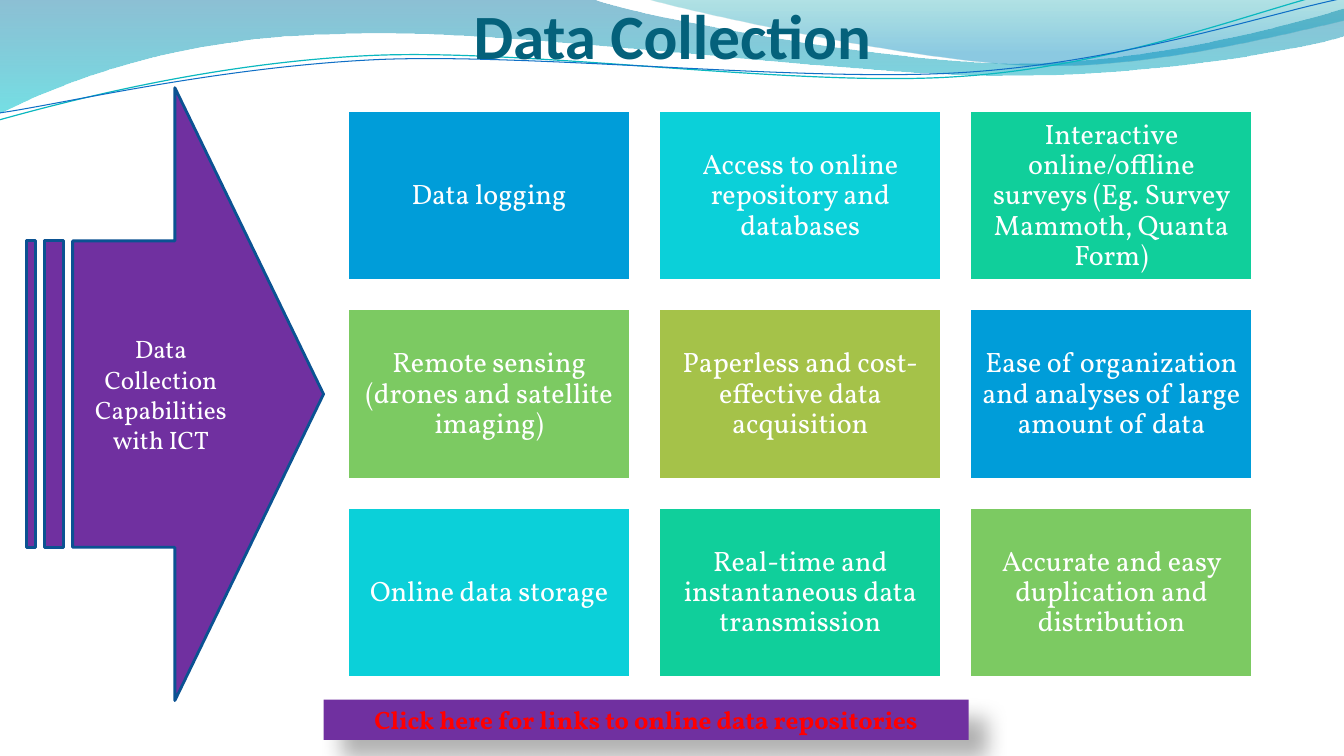
from lxml import etree
from pptx import Presentation
from pptx.dml.color import RGBColor
from pptx.enum.shapes import MSO_SHAPE
from pptx.enum.text import MSO_ANCHOR, MSO_AUTO_SIZE, PP_ALIGN
from pptx.oxml.ns import qn
from pptx.util import Pt

PX = 9144  # EMU per px, 100 px to the inch
RECT, ARROW = MSO_SHAPE.RECTANGLE, MSO_SHAPE.STRIPED_RIGHT_ARROW
CENTER = PP_ALIGN.CENTER
MIDDLE, BOTTOM = MSO_ANCHOR.MIDDLE, MSO_ANCHOR.BOTTOM
NO_AUTOFIT = MSO_AUTO_SIZE.NONE

WHITE = RGBColor(0xFF, 0xFF, 0xFF)
RED = RGBColor(0xFF, 0x00, 0x00)
PURPLE = RGBColor(0x70, 0x30, 0xA0)
NAVY = RGBColor(0x0B, 0x52, 0x92)
TITLE_TEAL = RGBColor(0x04, 0x61, 0x7B)
BLUE = RGBColor(0x00, 0x9D, 0xD9)
CYAN = RGBColor(0x0B, 0xD0, 0xD9)
MINT = RGBColor(0x10, 0xCF, 0x9B)
GREEN = RGBColor(0x7C, 0xCA, 0x62)
OLIVE = RGBColor(0xA5, 0xC2, 0x49)
WAVE_BLUE = RGBColor(0x00, 0x74, 0xA1)
WAVE_CYAN = RGBColor(0x00, 0xC6, 0xCF)
CREST_TEAL = RGBColor(0x00, 0xA1, 0xA9)
CREST_BLUE = RGBColor(0x00, 0x8B, 0xBF)
LINE_TEAL = RGBColor(0x0A, 0xB8, 0xBF)
LINE_BLUE = RGBColor(0x0F, 0x6F, 0xC6)

# Each outline is a start point, then lines (2 numbers) and Bézier curves (6 numbers).
WAVE = [(0, 0), (587, -1), (634, 17, 885, 63, 1011, 63), (1138, 63, 1278, 26, 1333, 9),
        (1335, 36), (1311, 44, 1160, 76, 994, 75), (829, 75, 509, 28, 343, 34),
        (172, 36, 61, 83, -1, 113)]
CREST = [(639, -1), (679, 11, 909, 62, 1025, 65), (1141, 69, 1282, 32, 1333, 21), (1333, 0)]
TEAL_LINE = [(-1, 119), (64, 101, 211, 62, 369, 55), (527, 48, 790, 87, 950, 76),
             (1110, 66, 1252, 8, 1331, -10)]
BLUE_LINE = [(0, 112), (63, 103, 218, 66, 378, 59), (537, 53, 796, 82, 955, 72),
             (1115, 62, 1255, 14, 1334, -2)]

CAPABILITIES = [
    ("Data logging", BLUE),
    ("Access to online repository and databases", CYAN),
    ("Interactive online/offline surveys (Eg. Survey Mammoth, Quanta Form)", MINT),
    ("Remote sensing (drones and satellite imaging)", GREEN),
    ("Paperless and cost-effective data acquisition", OLIVE),
    ("Ease of organization and analyses of large amount of data", BLUE),
    ("Online data storage", CYAN),
    ("Real-time and instantaneous data transmission", MINT),
    ("Accurate and easy duplication and distribution", GREEN),
]


def add_outline(shapes, outline, close):
    """Join the end points by lines, then bend the segments that have control points."""
    start, *segments = outline
    builder = shapes.build_freeform(start[0] * PX, start[1] * PX)
    builder.add_line_segments([(segment[-2] * PX, segment[-1] * PX) for segment in segments],
                              close=close)
    shape = builder.convert_to_shape()
    shape.shadow.inherit = False
    lines = list(shape._element.spPr.iter(qn("a:lnTo")))
    for line, segment in zip(lines, segments):
        if len(segment) == 6:
            line.addprevious(bezier(segment, shape.left, shape.top))
            line.getparent().remove(line)
    return shape


def bezier(segment, left, top):
    curve = etree.Element(qn("a:cubicBezTo"))
    for x, y in zip(segment[::2], segment[1::2]):
        etree.SubElement(curve, qn("a:pt"), x=str(x * PX - left), y=str(y * PX - top))
    return curve


def add_wave(shapes, outline, stops):
    """Fill an outline top to bottom with (position, colour, opacity %) stops."""
    wave = add_outline(shapes, outline, True)
    wave.line.fill.background()
    wave.fill.gradient()
    wave.fill.gradient_angle = 270
    for stop, (position, color, _) in zip(wave.fill.gradient_stops, stops):
        stop.position = position
        stop.color.rgb = color
    colors = wave._element.spPr.find(qn("a:gradFill")).iter(qn("a:srgbClr"))
    for color, (_, _, opacity) in zip(colors, stops):
        etree.SubElement(color, qn("a:alpha"), val=str(opacity * 1000))


def add_wave_line(shapes, outline, color, width):
    curve = add_outline(shapes, outline, False)
    curve.fill.background()
    curve.line.color.rgb = color
    curve.line.width = Pt(width)


def add_wave_header(shapes):
    add_wave(shapes, WAVE, [(0, WAVE_BLUE, 45), (1, WAVE_CYAN, 55)])
    add_wave(shapes, CREST, [(0, CREST_TEAL, 30), (0.8, CREST_BLUE, 45)])
    add_wave_line(shapes, TEAL_LINE, LINE_TEAL, 0.85)
    add_wave_line(shapes, BLUE_LINE, LINE_BLUE, 0.75)


def write(shape, text, size, color, font="Vollkorn", bold=False):
    paragraph = shape.text_frame.paragraphs[0]
    paragraph.alignment = CENTER
    run = paragraph.add_run()
    run.text = text
    run.font.name = font
    run.font.size = Pt(size)
    run.font.bold = bold
    run.font.color.rgb = color
    return paragraph


def set_insets(frame, left, top, right, bottom):
    frame.margin_left, frame.margin_top = left * PX, top * PX
    frame.margin_right, frame.margin_bottom = right * PX, bottom * PX


def add_title(slide, left, top, width, height):
    title = slide.shapes.title
    title.left, title.top = left * PX, top * PX
    title.width, title.height = width * PX, height * PX
    frame = title.text_frame
    frame.auto_size = NO_AUTOFIT
    frame.vertical_anchor = BOTTOM
    set_insets(frame, 0, 5, 0, 0)
    write(title, "Data Collection", 45, TITLE_TEAL, "Calibri", True)
    slide.shapes._spTree.append(title._element)  # in front of the waves


def add_block(shapes, kind, box, fill, line=None):
    block = shapes.add_shape(kind, *(round(length * PX) for length in box))
    block.shadow.inherit = False
    block.fill.solid()
    block.fill.fore_color.rgb = fill
    if line is None:
        block.line.fill.background()
    else:
        block.line.color.rgb = line
        block.line.width = Pt(2)
    block.text_frame.word_wrap = True
    block.text_frame.vertical_anchor = MIDDLE
    return block


def add_link_banner(shapes, *box):
    banner = add_block(shapes, RECT, box, PURPLE)
    write(banner, "Click here for links to online data repositories", 18, RED, bold=True)
    effects = banner._element.spPr.find(qn("a:effectLst"))
    shadow = etree.SubElement(effects, qn("a:outerShdw"), blurRad=str(Pt(15)),
                              dist=str(Pt(18)), dir=str(45 * 60000), algn="tl",
                              rotWithShape="0")
    black = etree.SubElement(shadow, qn("a:srgbClr"), val="000000")
    etree.SubElement(black, qn("a:alpha"), val="30000")


def add_capability_grid(shapes, left, top, width, height, columns=3, gap=28):
    rows = len(CAPABILITIES) // columns
    card_width = (width - gap * (columns - 1)) / columns
    card_height = (height - gap * (rows - 1)) / rows
    for index, (capability, color) in enumerate(CAPABILITIES):
        row, column = divmod(index, columns)
        box = (left + column * (card_width + gap), top + row * (card_height + gap),
               card_width, card_height)
        card = add_block(shapes, RECT, box, color, WHITE)
        set_insets(card.text_frame, 9, 8, 9, 8)
        write(card, capability, 20, WHITE).line_spacing = 0.9


def add_ict_arrow(shapes, *box):
    arrow = add_block(shapes, ARROW, box, PURPLE, NAVY)
    write(arrow, "Data Collection Capabilities with ICT", 18, WHITE)


def main():
    deck = Presentation()
    deck.slide_height = 750 * PX
    deck.slide_width = deck.slide_height * 16 // 9
    slide = deck.slides.add_slide(deck.slide_layouts[5])
    add_wave_header(slide.shapes)
    add_title(slide, 92, 12, 1150, 60)
    add_link_banner(slide.shapes, 321, 694, 640, 40)
    add_capability_grid(slide.shapes, 345, 110, 898, 562)
    add_ict_arrow(slide.shapes, 26, 87, 295, 608)
    deck.save("out.pptx")


if __name__ == "__main__":
    main()
